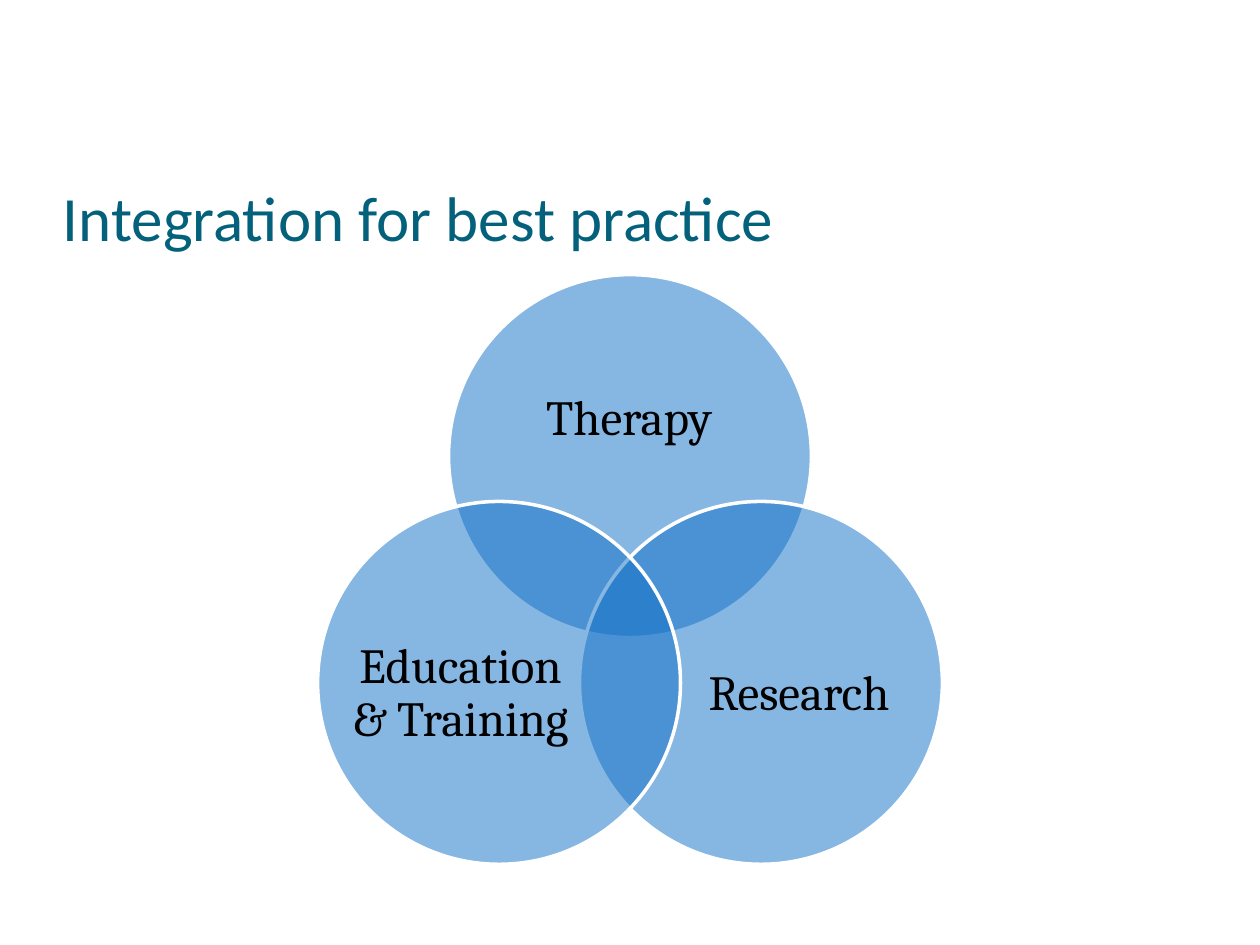
from math import cos, radians, sin

from lxml.etree import SubElement
from pptx import Presentation
from pptx.dml.color import RGBColor
from pptx.enum.shapes import MSO_SHAPE as Shape
from pptx.enum.text import MSO_ANCHOR as Anchor, PP_ALIGN as Align
from pptx.oxml.ns import qn
from pptx.util import Inches, Pt

TEAL = RGBColor(0x04, 0x61, 0x7B)
BLUE = RGBColor(0x0F, 0x6F, 0xC6)
WHITE = RGBColor(0xFF, 0xFF, 0xFF)
BLACK = RGBColor(0x00, 0x00, 0x00)

COLUMNS, ROWS = 100, 75
CENTER_COLUMN, CENTER_ROW = 50, 48.2
ORBIT, DIAMETER = 12, 28.8

# Name, angle clockwise from the top, label box as shares of the diameter
CIRCLES = [
    ("Therapy", 0, (0.13, 0.175, 0.735, 0.45)),
    ("Research", 120, (0.305, 0.257, 0.6, 0.55)),
    ("Education & Training", 240, (0.094, 0.257, 0.6, 0.55)),
]


class SlideBuilder:
    TITLE = {
        "font": {"name": "Calibri", "size": Pt(36)},
        "color": TEAL,
        "paragraph": {"alignment": Align.LEFT},
        "frame": {"vertical_anchor": Anchor.BOTTOM, "margin_top": Inches(0.05),
                  "margin_bottom": 0},
    }
    LABEL = {
        "font": {"name": "Cambria", "size": Pt(28)},
        "color": BLACK,
        "paragraph": {"alignment": Align.CENTER, "line_spacing": 0.9,
                      "space_after": Pt(9.8)},
        "frame": {"vertical_anchor": Anchor.MIDDLE, "margin_top": 0,
                  "margin_bottom": 0},
    }
    FRAME = {"word_wrap": True, "margin_left": 0, "margin_right": 0}

    def __init__(self, presentation):
        self.column = presentation.slide_width / COLUMNS
        self.row = presentation.slide_height / ROWS
        blank = presentation.slide_layouts[6]
        self.slide = presentation.slides.add_slide(blank)

    def box(self, left, top, width, height):
        """Turn columns and rows into slide lengths."""
        return (round(left * self.column), round(top * self.row),
                round(width * self.column), round(height * self.row))

    @staticmethod
    def apply(target, values):
        for name, value in values.items():
            setattr(target, name, value)

    def text(self, words, area, style):
        frame = self.slide.shapes.add_textbox(*self.box(*area)).text_frame
        self.apply(frame, {**self.FRAME, **style["frame"]})
        paragraph = frame.paragraphs[0]
        self.apply(paragraph, style["paragraph"])
        run = paragraph.add_run()
        run.text = words
        self.apply(run.font, style["font"])
        run.font.color.rgb = style["color"]

    def circle(self, left, top, diameter):
        """Draw a half-transparent circle with a white outline."""
        area = self.box(left, top, diameter, diameter)
        shape = self.slide.shapes.add_shape(Shape.OVAL, *area)
        shape.shadow.inherit = False
        shape.fill.solid()
        shape.fill.fore_color.rgb = BLUE
        color = shape.fill._xPr.find(qn("a:solidFill"))[0]
        SubElement(color, qn("a:alpha"), val="50000")
        shape.line.color.rgb = WHITE
        shape.line.width = Pt(2)


def main():
    presentation = Presentation()
    presentation.slide_width = Inches(10)
    presentation.slide_height = Inches(7.5)
    builder = SlideBuilder(presentation)

    builder.text("Integration for best practice", (5, 7.7, 90, 12.5), builder.TITLE)
    for name, angle, (x, y, width, height) in CIRCLES:
        left = CENTER_COLUMN + ORBIT * sin(radians(angle)) - DIAMETER / 2
        top = CENTER_ROW - ORBIT * cos(radians(angle)) - DIAMETER / 2
        builder.circle(left, top, DIAMETER)
        label_area = (left + x * DIAMETER, top + y * DIAMETER,
                      width * DIAMETER, height * DIAMETER)
        builder.text(name, label_area, builder.LABEL)

    presentation.save("out.pptx")


if __name__ == "__main__":
    main()
